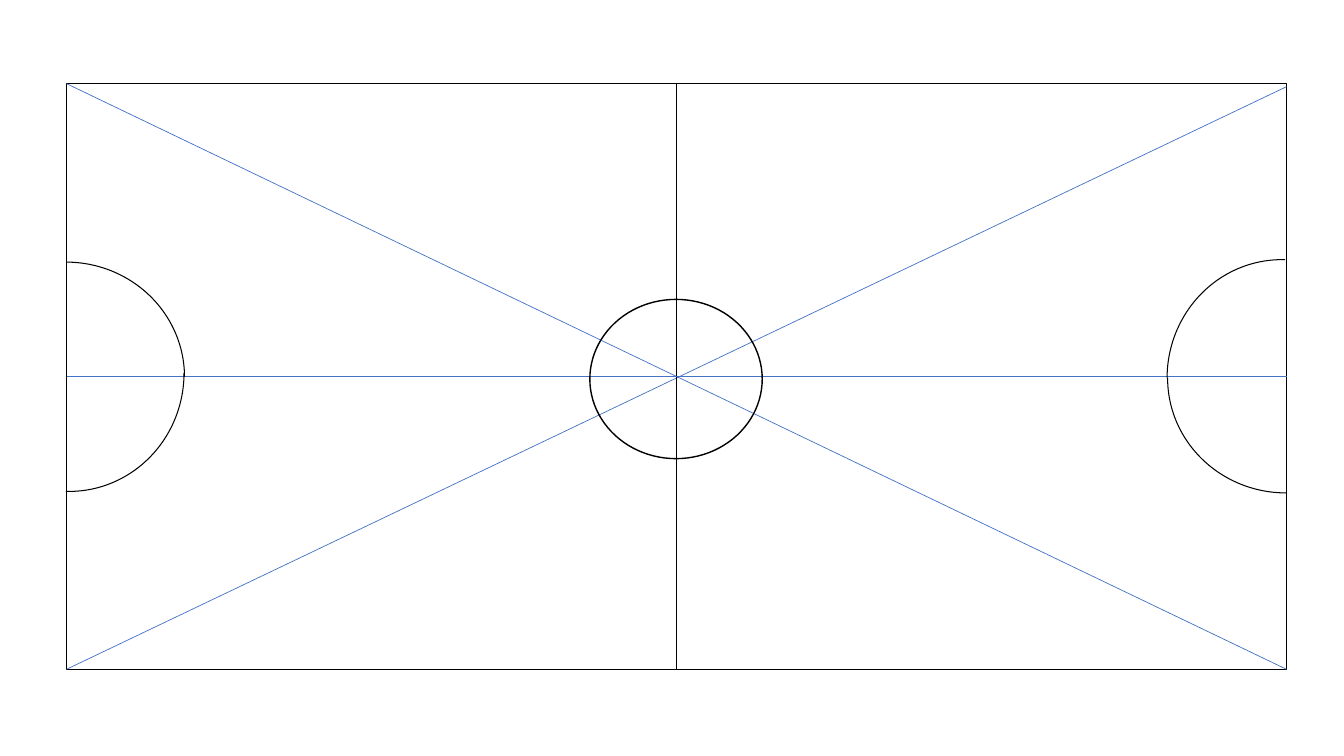
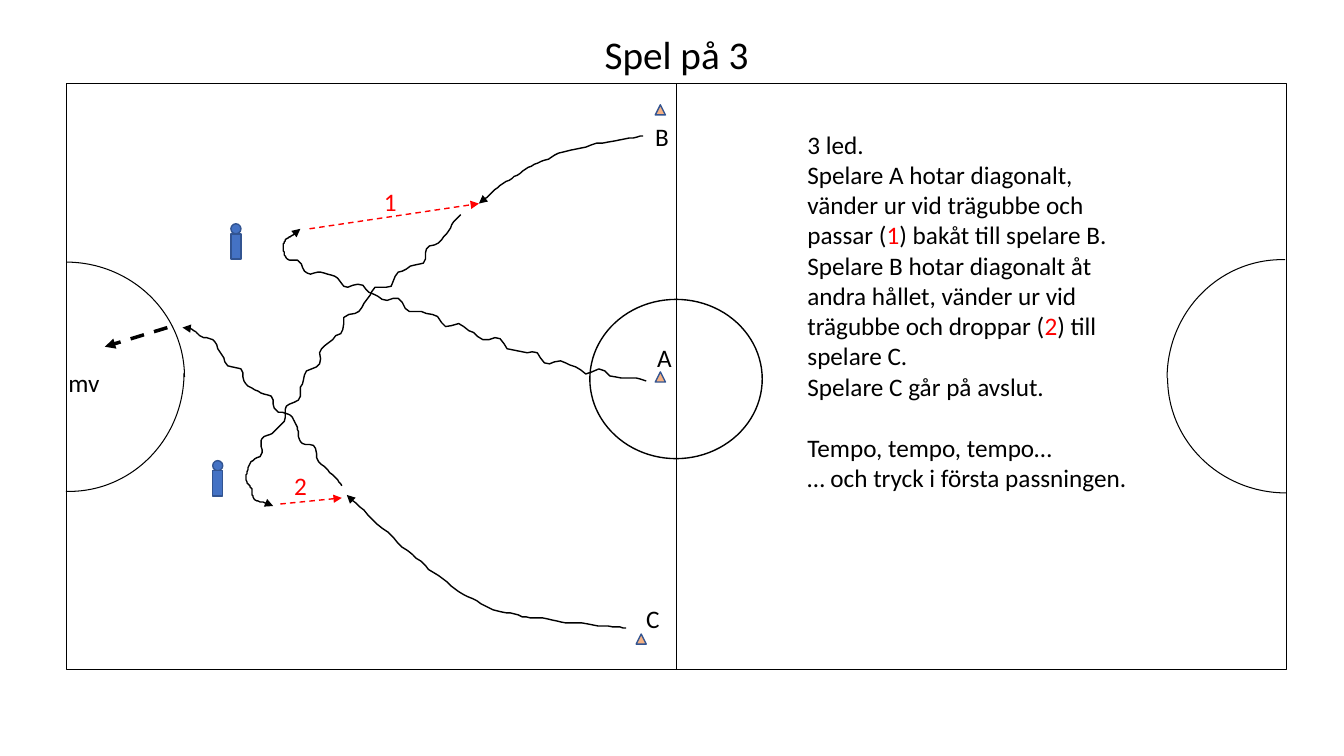
from itertools import pairwise
from math import dist, pi, sin

from lxml import etree
from pptx import Presentation
from pptx.dml.color import RGBColor
from pptx.enum.dml import MSO_LINE
from pptx.enum.shapes import MSO_CONNECTOR, MSO_SHAPE
from pptx.enum.text import MSO_AUTO_SIZE, PP_ALIGN
from pptx.oxml.ns import qn
from pptx.util import Pt

PX = 9144
FONT = "Calibri"
BLACK = RGBColor(0x00, 0x00, 0x00)
RED = RGBColor(0xFF, 0x00, 0x00)
BLUE = RGBColor(0x44, 0x72, 0xC4)
DARK_BLUE = RGBColor(0x32, 0x54, 0x91)
ORANGE = RGBColor(0xF4, 0xB1, 0x83)

RECTANGLE = MSO_SHAPE.RECTANGLE
OVAL = MSO_SHAPE.OVAL
ARC = MSO_SHAPE.ARC
TRIANGLE = MSO_SHAPE.ISOSCELES_TRIANGLE
STRAIGHT = MSO_CONNECTOR.STRAIGHT
DASH = MSO_LINE.DASH
LEFT, CENTER = PP_ALIGN.LEFT, PP_ALIGN.CENTER
FIT_SHAPE = MSO_AUTO_SIZE.SHAPE_TO_FIT_TEXT
TOP_SIDE, LEFT_SIDE, BOTTOM_SIDE, RIGHT_SIDE = range(4)

PITCH_LEFT, PITCH_TOP, PITCH_RIGHT, PITCH_BOTTOM = 66, 83, 1276, 664
PITCH_WIDTH, PITCH_HEIGHT = PITCH_RIGHT - PITCH_LEFT, PITCH_BOTTOM - PITCH_TOP
MIDDLE_X, MIDDLE_Y = 671, 374
QUARTER_ARCS = [(-52, 260, 0), (-49, 256, 90), (1158, 261, 180), (1154, 261, 270)]

CURVE_STEPS = 16
WAVE_LENGTH = 36
WAVE_FADE = 40
DRIBBLE, SPRINT = 3, 0.5

A_THREATENS = [(641, 378), (560, 362), (485, 336), (403, 304), (335, 277),
               (290, 260), (283, 240), (298, 227)]
B_MEETS_PASS = [(638, 135), (562, 150), (510, 175), (475, 202)]
B_THREATENS = [(457, 213), (420, 255), (364, 297), (316, 355), (284, 411),
               (258, 445), (245, 475), (251, 492), (271, 502)]
C_MEETS_PASS = [(621, 623), (547, 615), (481, 601), (413, 554), (344, 491)]
C_FINISHES = [(339, 482), (304, 440), (283, 410), (243, 377), (205, 335), (181, 325)]
ROUTES = [
    (A_THREATENS, DRIBBLE),
    (B_MEETS_PASS, SPRINT),
    (B_THREATENS, DRIBBLE),
    (C_MEETS_PASS, SPRINT),
    (C_FINISHES, DRIBBLE),
]
PASSES = [((307, 227), (475, 202)), ((278, 500), (339, 494))]
SHOT = ((166, 325), (104, 344))

INSTRUCTIONS = [
    ["3 led."],
    ["Spelare A hotar diagonalt, vänder ur vid trägubbe och passar (", "1",
     ") bakåt till spelare B."],
    ["Spelare B hotar diagonalt åt andra hållet, vänder ur vid trägubbe och droppar (",
     "2", ") till spelare C."],
    ["Spelare C går på avslut."],
    ["Tempo, tempo, tempo…"],
    ["… och tryck i första passningen."],
]
TEMPO = 4


def spline(before, start, end, after, t):
    return 0.5 * (2 * start + (end - before) * t
                  + (2 * before - 5 * start + 4 * end - after) * t ** 2
                  + (3 * start - before - 3 * end + after) * t ** 3)


def smooth_curve(waypoints):
    padded = [waypoints[0], *waypoints, waypoints[-1]]
    curve = []
    for corners in zip(padded, padded[1:], padded[2:], padded[3:]):
        xs, ys = zip(*corners)
        for step in range(CURVE_STEPS):
            t = step / CURVE_STEPS
            curve.append((spline(*xs, t), spline(*ys, t)))
    return [*curve, waypoints[-1]]


def wavy_curve(waypoints, wave_height):
    curve = smooth_curve(waypoints)
    total = sum(dist(start, end) for start, end in pairwise(curve))
    points = [curve[0]]
    travelled = 0
    for (last_x, last_y), (x, y) in pairwise(curve):
        length = dist((last_x, last_y), (x, y))
        travelled += length
        phase = 2 * pi * travelled / WAVE_LENGTH
        fade = max(0, min(1, travelled / WAVE_FADE, (total - travelled) / WAVE_FADE))
        offset = wave_height * fade * (sin(phase) + 0.5 * sin(1.7 * phase))
        points.append((x - offset * (y - last_y) / length,
                       y + offset * (x - last_x) / length))
    return points


class Board:
    def __init__(self):
        self.deck = Presentation()
        self.deck.slide_width, self.deck.slide_height = 1333 * PX, 750 * PX
        self.page = None

    def new_page(self):
        self.page = self.deck.slides.add_slide(self.deck.slide_layouts[6])

    def style_line(self, item, color, width, arrow=False, dash=None):
        item.line.color.rgb = color
        item.line.width = Pt(width)
        if dash:
            item.line.dash_style = dash
        if arrow:
            outline = item._element.spPr.find(qn("a:ln"))
            etree.SubElement(outline, qn("a:tailEnd"), type="triangle")

    def shape(self, kind, left, top, width, height, line=BLACK, weight=1, fill=None):
        shape = self.page.shapes.add_shape(
            kind, left * PX, top * PX, width * PX, height * PX)
        shape.shadow.inherit = False
        if fill is None:
            shape.fill.background()
        else:
            shape.fill.solid()
            shape.fill.fore_color.rgb = fill
        self.style_line(shape, line, weight)
        return shape

    def line(self, start, end, color, width, arrow=False, dash=None):
        line = self.page.shapes.add_connector(
            STRAIGHT, *(value * PX for value in (*start, *end)))
        self.style_line(line, color, width, arrow, dash)
        etree.SubElement(line._element.spPr, qn("a:effectLst"))
        return line

    def route(self, waypoints, wave_height):
        start, *rest = wavy_curve(waypoints, wave_height)
        builder = self.page.shapes.build_freeform(*start, scale=PX)
        builder.add_line_segments(rest, close=False)
        shape = builder.convert_to_shape()
        shape.shadow.inherit = False
        shape.fill.background()
        self.style_line(shape, BLACK, 1, arrow=True)

    def text(self, paragraphs, left, top, width, height=40, size=18, color=BLACK,
             align=LEFT):
        box = self.page.shapes.add_textbox(left * PX, top * PX, width * PX, height * PX)
        frame = box.text_frame
        frame.word_wrap = True
        frame.auto_size = FIT_SHAPE
        for index, spans in enumerate(paragraphs):
            para = frame.paragraphs[0] if index == 0 else frame.add_paragraph()
            para.alignment = align
            para.font.name = FONT
            para.font.size = Pt(size)
            para.font.color.rgb = color
            for position, words in enumerate(spans):
                span = para.add_run()
                span.text = words
                if position % 2:
                    span.font.color.rgb = RED
        return frame

    def pitch(self, halfway_width, guides=False):
        pitch = self.shape(RECTANGLE, PITCH_LEFT, PITCH_TOP, PITCH_WIDTH, PITCH_HEIGHT)
        if guides:
            self.line((PITCH_LEFT, PITCH_TOP), (PITCH_RIGHT, PITCH_BOTTOM), BLUE, 0.5)
            self.line((PITCH_LEFT, PITCH_BOTTOM), (PITCH_RIGHT, PITCH_TOP + 3), BLUE, 0.5)
        halfway = self.line(
            (MIDDLE_X, PITCH_BOTTOM), (MIDDLE_X, PITCH_TOP), BLACK, halfway_width)
        halfway.begin_connect(pitch, BOTTOM_SIDE)
        halfway.end_connect(pitch, TOP_SIDE)
        if guides:
            axis = self.line((PITCH_LEFT, MIDDLE_Y), (PITCH_RIGHT, MIDDLE_Y), BLUE, 0.5)
            axis.begin_connect(pitch, LEFT_SIDE)
            axis.end_connect(pitch, RIGHT_SIDE)
        self.shape(OVAL, 585, 297, 171, 158)
        for left, top, angle in QUARTER_ARCS:
            arc = self.shape(ARC, left, top, 235, 228, weight=0.75)
            arc.rotation = angle
            if angle % 180:
                arc.adjustments[1] = 0.9

    def cone(self, left, top):
        self.shape(TRIANGLE, left, top, 10, 10, DARK_BLUE, fill=ORANGE)

    def dummy(self, left, top):
        self.shape(OVAL, left, top, 10, 10, DARK_BLUE, fill=BLUE)
        self.shape(RECTANGLE, left, top + 10, 10, 25, DARK_BLUE, fill=BLUE)


def draw_empty_pitch(board):
    board.new_page()
    board.pitch(halfway_width=1, guides=True)


def draw_drill(board):
    board.new_page()
    board.pitch(halfway_width=0.75)
    board.text([["Spel på 3"]], 385, 25, 572, 57, size=28, align=CENTER)
    for left, top in [(631, 629), (650, 369), (650, 104)]:
        board.cone(left, top)
    for player, left, top in [("C", 631, 594), ("A", 642, 335), ("B", 640, 115)]:
        board.text([[player]], left, top, 34)
    for left, top in [(211, 457), (229, 222)]:
        board.dummy(left, top)
    for waypoints, wave_height in ROUTES:
        board.route(waypoints, wave_height)
    for start, end in PASSES:
        board.line(start, end, RED, 1, arrow=True, dash=DASH)
    board.line(*SHOT, BLACK, 2.5, arrow=True, dash=DASH)
    board.text([["mv"]], 58, 359, 63)
    instructions = board.text(INSTRUCTIONS, 791, 123, 356, 374)
    instructions.paragraphs[TEMPO].space_before = Pt(22)
    for number, left, top in [("1", 371, 180), ("2", 282, 462)]:
        board.text([[number]], left, top, 37, color=RED)


def main():
    board = Board()
    draw_empty_pitch(board)
    draw_drill(board)
    board.deck.save("out.pptx")


if __name__ == "__main__":
    main()
